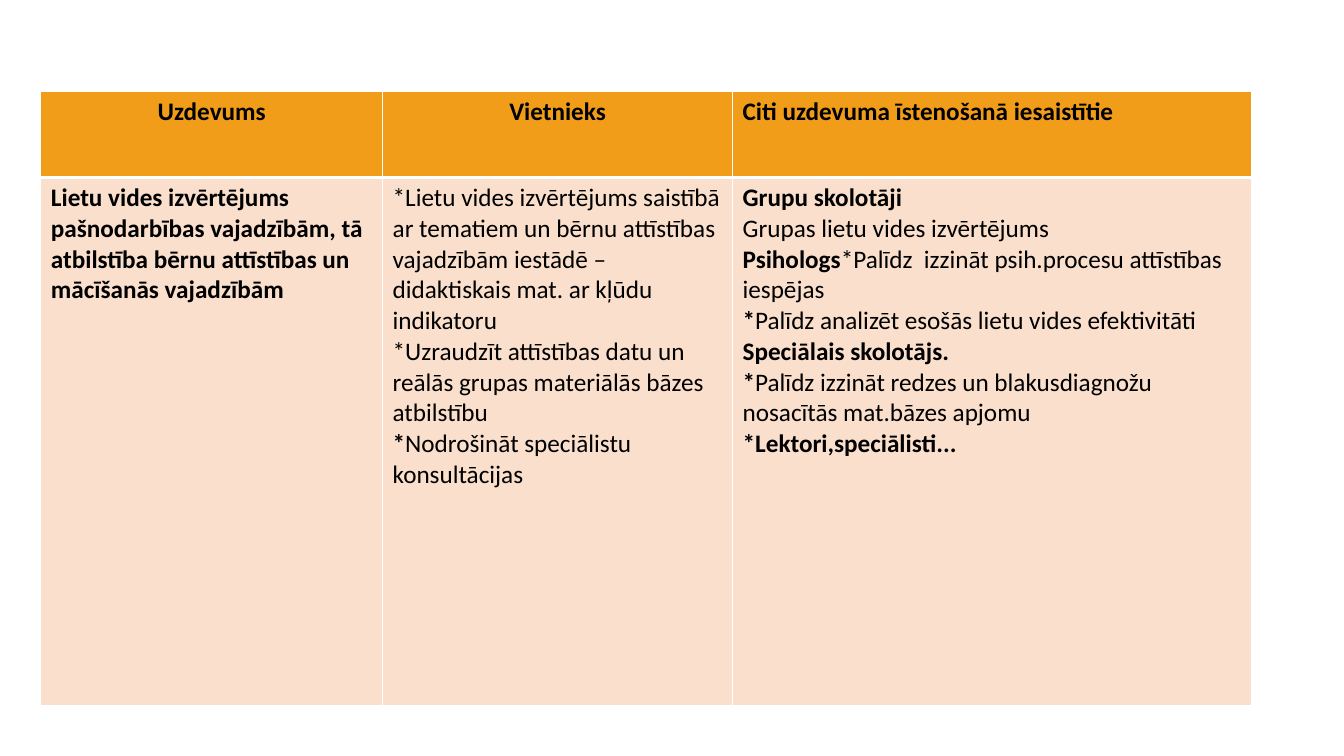
"""Build a slide with a table of tasks, the deputy's part and others involved."""
import pptx
import pptx.dml.color
import pptx.enum.text
import pptx.oxml
import pptx.oxml.ns
import pptx.util

Pt = pptx.util.Pt
RGBColor = pptx.dml.color.RGBColor
ORANGE = RGBColor(0xF1, 0x9D, 0x19)
PEACH = RGBColor(0xFA, 0xDF, 0xCC)
BLACK = RGBColor(0, 0, 0)
WHITE = RGBColor(0xFF, 0xFF, 0xFF)

COLUMN_WIDTHS = [244.1, 250, 371]
ROW_HEIGHTS = [61.2, 377.3]
ROW_FILLS = [ORANGE, PEACH]
ROW_BORDERS = [
    {"lnL": 1, "lnR": 1, "lnT": 1, "lnB": 3},
    {"lnL": 1, "lnR": 1, "lnT": 3, "lnB": 1},
]

# Each paragraph is a (bold text, regular text) pair.
ROWS = [
    [
        [("Uzdevums", "")],
        [("Vietnieks", "")],
        [("Citi uzdevuma īstenošanā iesaistītie", "")],
    ],
    [
        [("Lietu vides izvērtējums pašnodarbības vajadzībām, tā atbilstība "
          "bērnu attīstības un mācīšanās vajadzībām", "")],
        [
            ("", "*Lietu vides izvērtējums saistībā ar tematiem un bērnu attīstības "
                 "vajadzībām iestādē – didaktiskais mat. ar kļūdu indikatoru"),
            ("", "*Uzraudzīt attīstības datu un reālās grupas materiālās bāzes atbilstību"),
            ("*", "Nodrošināt speciālistu konsultācijas"),
        ],
        [
            ("Grupu skolotāji", ""),
            ("", "Grupas lietu vides izvērtējums"),
            ("Psihologs", "*Palīdz  izzināt psih.procesu attīstības iespējas"),
            ("*", "Palīdz analizēt esošās lietu vides efektivitāti"),
            ("Speciālais skolotājs.", ""),
            ("*", "Palīdz izzināt redzes un blakusdiagnožu nosacītās mat.bāzes apjomu"),
            ("*Lektori,speciālisti...", ""),
        ],
    ],
]


def set_borders(cell, widths):
    tcPr = cell._tc.get_or_add_tcPr()
    for i, (side, width) in enumerate(widths.items()):
        ln = pptx.oxml.parse_xml(
            f'<a:{side} {pptx.oxml.ns.nsdecls("a")} w="{Pt(width)}">'
            f'<a:solidFill><a:srgbClr val="{WHITE}"/></a:solidFill></a:{side}>')
        tcPr.insert(i, ln)


def fill_text(cell, paragraphs):
    tf = cell.text_frame
    for i, parts in enumerate(paragraphs):
        p = tf.add_paragraph() if i else tf.paragraphs[0]
        for text, bold in zip(parts, (True, False)):
            if text:
                r = p.add_run()
                r.text = text
                r.font.name = "Calibri"
                r.font.size = Pt(18)
                r.font.bold = bold
                r.font.color.rgb = BLACK


prs = pptx.Presentation()
prs.slide_width, prs.slide_height = Pt(960), Pt(540)
s = prs.slides.add_slide(prs.slide_layouts[6])

table = s.shapes.add_table(len(ROWS), len(COLUMN_WIDTHS), Pt(29.2), Pt(65.6),
                           Pt(sum(COLUMN_WIDTHS)), Pt(sum(ROW_HEIGHTS))).table
for column, width in zip(table.columns, COLUMN_WIDTHS):
    column.width = Pt(width)

for row, height, fill, borders, contents in zip(
        table.rows, ROW_HEIGHTS, ROW_FILLS, ROW_BORDERS, ROWS):
    row.height = Pt(height)
    for cell, paragraphs in zip(row.cells, contents):
        cell.fill.solid()
        cell.fill.fore_color.rgb = fill
        set_borders(cell, borders)
        fill_text(cell, paragraphs)

for cell in list(table.rows[0].cells)[:2]:
    cell.text_frame.paragraphs[0].alignment = pptx.enum.text.PP_ALIGN.CENTER

prs.save("out.pptx")
